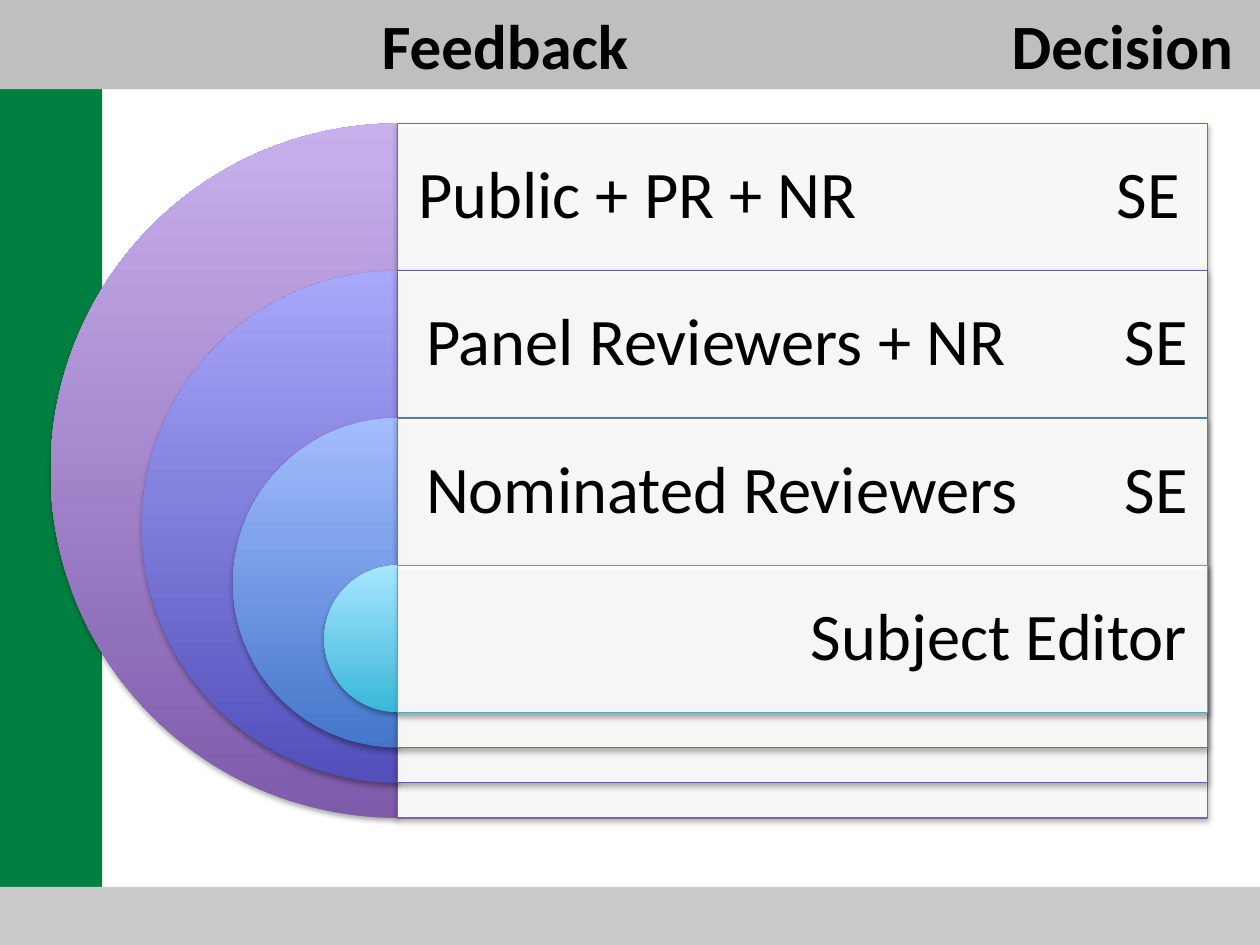
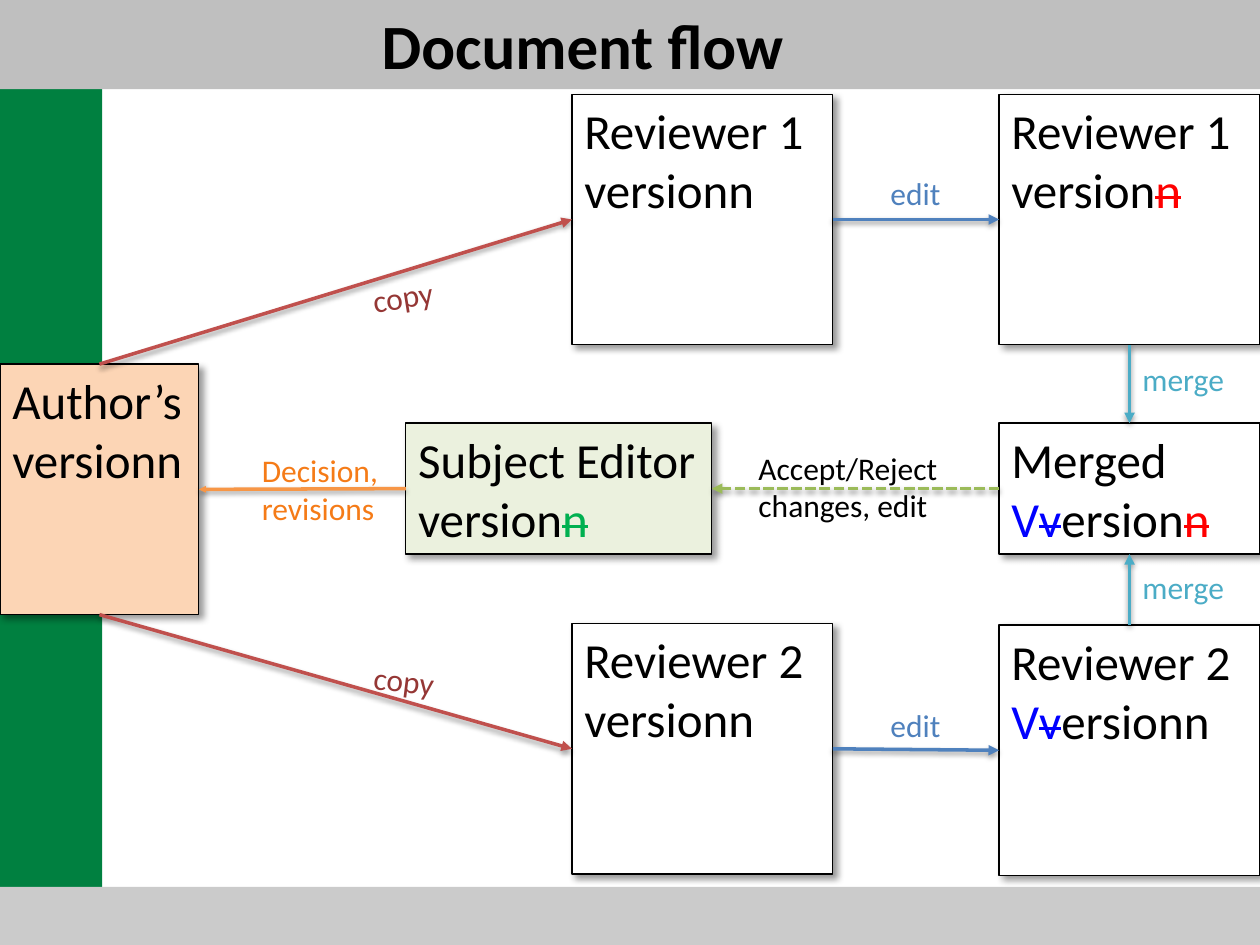
"""Builds two slides on a journal's review stages and its document flow."""
import pptx
import pptx.dml.color
import pptx.enum.dml
import pptx.enum.shapes
import pptx.enum.text
import pptx.oxml.ns
import pptx.util
from lxml import etree

Cm, Pt, qn = pptx.util.Cm, pptx.util.Pt, pptx.oxml.ns.qn
RGB = pptx.dml.color.RGBColor.from_string
SHAPE = pptx.enum.shapes.MSO_SHAPE
ALIGN = pptx.enum.text.PP_ALIGN
ANCHOR = pptx.enum.text.MSO_ANCHOR
NO_FIT = pptx.enum.text.MSO_AUTO_SIZE.NONE

COLOURS = {
    "black": "000000", "white": "FFFFFF", "footer": "CBCBCB", "header": "BFBFBF",
    "side": "008040", "author": "FCD5B5", "editor": "EBF1DE",
    "red": "FF0000", "blue": "0000FF", "green": "00B050",
    "copy": "C0504D", "copy text": "953735", "edit": "4F81BD", "merge": "4BACC6",
    "accept": "9BBB59", "decision": "F79646", "decision text": "F57B17",
}
SOFT = {"alpha": 35, "blur": 3.1, "dist": 1.8, "angle": 90}
BOX = {"alpha": 40, "blur": 4, "dist": 3, "angle": 45}
LINK = {"alpha": 38, "blur": 3.1, "dist": 1.6, "angle": 90}


def add_run(p, text, size, colour="black", tab=None, strike=False, **fmt):
    if tab:
        tabs = etree.SubElement(p._p.get_or_add_pPr(), qn("a:tabLst"))
        etree.SubElement(tabs, qn("a:tab"), pos=str(Cm(tab)), algn="l")
    r = p.add_run()
    r.text = text
    for key, value in {"name": "Calibri", "size": Pt(size), **fmt}.items():
        setattr(r.font, key, value)
    r.font.color.rgb = RGB(COLOURS[colour])
    if strike:
        r.font._element.set("strike", "sngStrike")


def add_shadow(sp, alpha, blur, dist, angle):
    effects = etree.SubElement(sp._element.spPr, qn("a:effectLst"))
    shadow = etree.SubElement(
        effects, qn("a:outerShdw"), blurRad=str(Pt(blur)), dist=str(Pt(dist)),
        dir=str(angle * 60000), rotWithShape="0")
    colour = etree.SubElement(shadow, qn("a:srgbClr"), val=COLOURS["black"])
    etree.SubElement(colour, qn("a:alpha"), val=str(alpha * 1000))


prs = pptx.Presentation()
prs.slide_width, prs.slide_height = Cm(25.4), Cm(19.05)
layout = prs.slide_layouts[5]
for ph in list(layout.placeholders)[1:]:
    ph._element.getparent().remove(ph._element)

slides = []
for title in ("Feedback\tDecision", "Document flow"):
    s = prs.slides.add_slide(layout)
    slides.append(s)
    sp = s.shapes.title
    sp.left, sp.top, sp.width, sp.height = Cm(7.44), Cm(0), Cm(17.96), Cm(1.78)
    tf = sp.text_frame
    for key, value in {"auto_size": NO_FIT, "word_wrap": True,
                       "vertical_anchor": ANCHOR.MIDDLE}.items():
        setattr(tf, key, value)
    p = tf.paragraphs[0]
    p.alignment = ALIGN.LEFT
    add_run(p, title, 36, tab=12.7 if "\t" in title else None, bold=True)

review, flow = slides
bands = []
for colour, *at in (("footer", 0, 17.88, 25.4, 1.17), ("header", 0, 0, 25.4, 1.8),
                    ("side", 0, 1.8, 2.06, 16.08)):
    sp = review.shapes.add_shape(SHAPE.RECTANGLE, *map(Cm, at))
    sp.shadow.inherit = False
    sp.fill.solid()
    sp.fill.fore_color.rgb = RGB(COLOURS[colour])
    sp.line.fill.background()
    bands.append(sp)
for sp in bands:
    layout.shapes._spTree.insert(2, sp._element)

stages = (
    ("Public + PR + NR\tSE", ALIGN.LEFT, "7F5BAB", "C8B0ED", "8064A2"),
    ("Panel Reviewers + NR\tSE", ALIGN.RIGHT, "534FBB", "A9A7F9", "5F5BAE"),
    ("Nominated Reviewers\tSE", ALIGN.RIGHT, "4476CA", "A4BDFF", "537ABA"),
    ("Subject Editor", ALIGN.RIGHT, "39B7D8", "A7E6FF", "4BACC6"),
)
middle, row, bar_width = 8.02, 2.97, 16.33
for i, (text, align, dark, light, edge) in enumerate(stages):
    top, size = 2.49 + row * i, 14 - 3.68 * i
    sp = review.shapes.add_shape(
        SHAPE.PIE, Cm(middle - size / 2), Cm(top), Cm(size), Cm(size))
    sp.adjustments[0], sp.adjustments[1] = 54, 162
    sp.fill.gradient()
    sp.fill.gradient_angle = 90
    for stop, colour in zip(sp.fill.gradient_stops, (dark, light)):
        stop.color.rgb = RGB(colour)
    sp.line.fill.background()
    add_shadow(sp, **SOFT)

    sp = review.shapes.add_shape(
        SHAPE.RECTANGLE, Cm(middle), Cm(top), Cm(bar_width), Cm(size))
    sp.fill.solid()
    sp.fill.fore_color.rgb = RGB(COLOURS["white"])
    white = sp._element.spPr.find(qn("a:solidFill"))[0]
    etree.SubElement(white, qn("a:alpha"), val="90000")
    sp.line.color.rgb = RGB(edge)
    sp.line.width = Pt(0.75)
    add_shadow(sp, **SOFT)

    tf = review.shapes.add_textbox(
        Cm(middle), Cm(top), Cm(bar_width), Cm(row)).text_frame
    for key, value in {"word_wrap": True, "vertical_anchor": ANCHOR.MIDDLE}.items():
        setattr(tf, key, value)
    for side in ("left", "top", "right", "bottom"):
        setattr(tf, "margin_" + side, Cm(0.41))
    p = tf.paragraphs[0]
    p.alignment, p.line_spacing = align, 0.9
    add_run(p, text, 38, tab=14.08 if "\t" in text else None)

plain = [("versionn",)]
capital = [("V", "blue"), ("v", "blue", None, True)]
boxes = {
    "author": (0, 7.34, 4.01, 5.05, "author", "Author’s", plain),
    "first": (11.53, 1.9, 5.26, 5.05, "white", "Reviewer 1", plain),
    "second": (11.53, 12.57, 5.26, 5.05, "white", "Reviewer 2", plain),
    "first edited": (20.14, 1.9, 5.26, 5.05, "white", "Reviewer 1",
                     [("version",), ("n", "red", None, True)]),
    "second edited": (20.14, 12.6, 5.26, 5.05, "white", "Reviewer 2",
                      capital + [("ersionn",)]),
    "merged": (20.14, 8.53, 5.26, 2.64, "white", "Merged",
               capital + [("ersion",), ("n", "red", None, True)]),
    "editor": (8.18, 8.53, 6.17, 2.64, "editor", "Subject Editor",
               [("version",), ("n", "green", None, True)]),
}
placed = {}
for name, (*at, fill, owner, version) in boxes.items():
    sp = placed[name] = flow.shapes.add_shape(SHAPE.RECTANGLE, *map(Cm, at))
    sp.fill.solid()
    sp.fill.fore_color.rgb = RGB(COLOURS[fill])
    sp.line.color.rgb = RGB(COLOURS["black"])
    sp.line.width = Pt(0.75)
    add_shadow(sp, **BOX)
    tf = sp.text_frame
    for key, value in {"word_wrap": True, "vertical_anchor": ANCHOR.TOP}.items():
        setattr(tf, key, value)
    for p, runs in ((tf.paragraphs[0], [(owner,)]), (tf.add_paragraph(), version)):
        p.alignment = ALIGN.LEFT
        for text, *style in runs:
            add_run(p, text, 28, *style)

TOP, LEFT, BOTTOM, RIGHT = range(4)
links = (
    ("author", TOP, "first", LEFT, "copy"),
    ("author", BOTTOM, "second", LEFT, "copy"),
    ("first", RIGHT, "first edited", LEFT, "edit"),
    ("second", RIGHT, "second edited", LEFT, "edit"),
    ("first edited", BOTTOM, "merged", TOP, "merge"),
    ("second edited", TOP, "merged", BOTTOM, "merge"),
    ("merged", LEFT, "editor", RIGHT, "accept"),
    ("editor", LEFT, "author", RIGHT, "decision"),
)
for start, start_site, end, end_site, kind in links:
    sp = flow.shapes.add_connector(pptx.enum.shapes.MSO_CONNECTOR.STRAIGHT, 0, 0, 0, 0)
    sp.begin_connect(placed[start], start_site)
    sp.end_connect(placed[end], end_site)
    sp.line.color.rgb = RGB(COLOURS[kind])
    sp.line.width = Pt(2)
    if kind == "accept":
        sp.line.dash_style = pptx.enum.dml.MSO_LINE.SQUARE_DOT
    head = "sm" if kind == "decision" else "med"
    etree.SubElement(sp.line._get_or_add_ln(), qn("a:tailEnd"),
                     type="triangle", w=head, len=head)
    add_shadow(sp, **LINK)

labels = (
    (["copy"], 7.26, 5.46, 1.75, -9, "copy text"),
    (["copy"], 7.29, 13.21, 1.75, 7, "copy text"),
    (["edit"], 17.7, 3.38, 1.52, 0, "edit"),
    (["edit"], 17.7, 14.1, 1.52, 0, "edit"),
    (["merge"], 22.78, 7.14, 2.18, 0, "merge"),
    (["merge"], 22.78, 11.33, 2.18, 0, "merge"),
    (["Accept/Reject", "changes, edit"], 15.04, 8.92, 4.13, 0, "black"),
    (["Decision,", "revisions"], 5.03, 8.97, 2.87, 0, "decision text"),
)
for lines, left, top, width, turn, colour in labels:
    sp = flow.shapes.add_textbox(
        Cm(left), Cm(top), Cm(width), Cm(0.24 + 0.78 * len(lines)))
    sp.rotation = turn
    tf = sp.text_frame
    tf.word_wrap = False
    for i, line in enumerate(lines):
        p = tf.add_paragraph() if i else tf.paragraphs[0]
        add_run(p, line, 18, colour)

prs.save("out.pptx")
